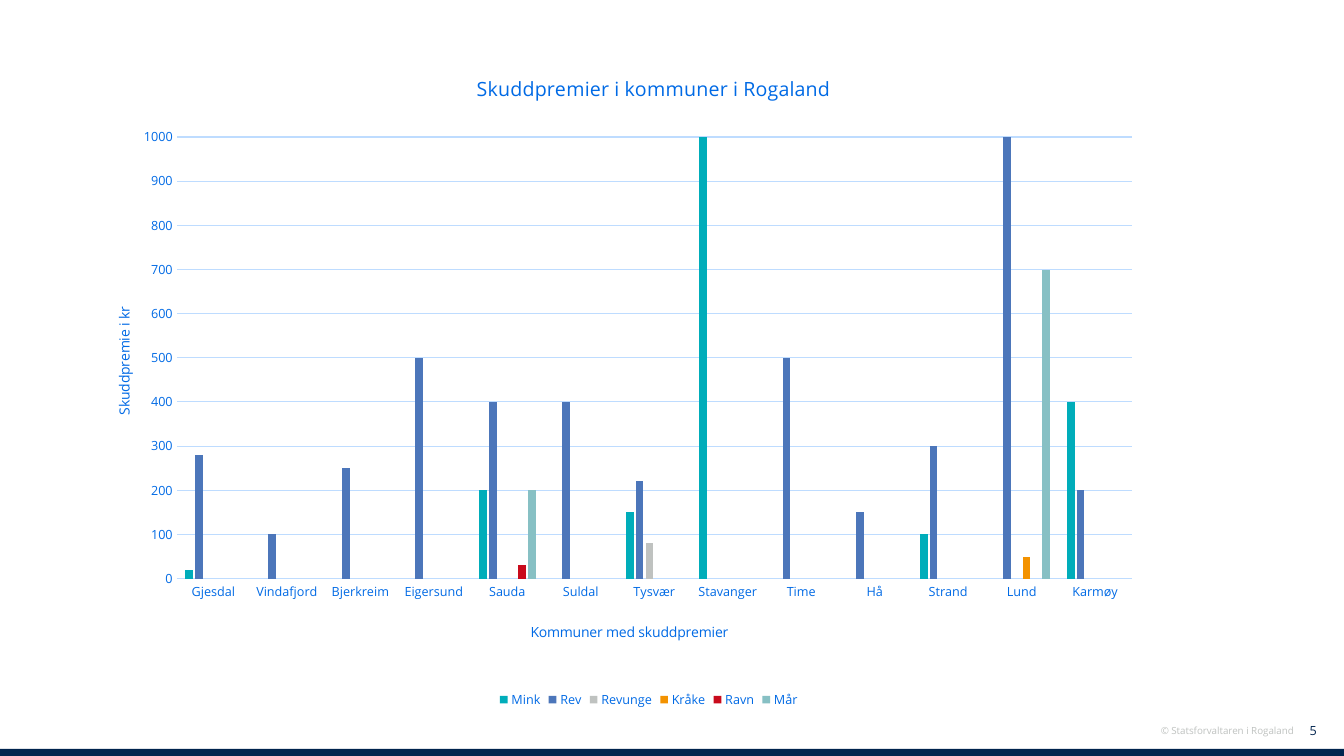
from dataclasses import dataclass

from pptx import Presentation
from pptx.chart.data import CategoryChartData
from pptx.dml.color import RGBColor
from pptx.enum.chart import XL_CHART_TYPE, XL_LEGEND_POSITION, XL_TICK_MARK
from pptx.enum.shapes import MSO_SHAPE
from pptx.enum.text import MSO_ANCHOR, PP_ALIGN
from pptx.oxml import parse_xml
from pptx.oxml.ns import nsdecls
from pptx.util import Inches, Pt

FONT = "Open Sans"
COLOURS = {
    "navy": "00244E", "blue": "006AE5", "grid": "BEDCFF", "grey": "BFC2C0",
    "teal": "00ADBA", "steel": "4C76BA", "orange": "F39200", "red": "C90B1C",
    "sage": "87C0C4",
}
MUNICIPALITIES = [
    "Gjesdal", "Vindafjord", "Bjerkreim", "Eigersund", "Sauda", "Suldal", "Tysvær",
    "Stavanger", "Time", "Hå", "Strand", "Lund", "Karmøy",
]


@dataclass
class Animal:
    name: str
    colour: str
    bounties: dict[str, int]


@dataclass
class FooterText:
    text: str
    left: float
    top: float
    width: float
    height: float
    size: float
    colour: str
    anchor: MSO_ANCHOR


ANIMALS = [
    Animal("Mink", "teal", {"Gjesdal": 20, "Sauda": 200, "Tysvær": 150,
                            "Stavanger": 1000, "Strand": 100, "Karmøy": 400}),
    Animal("Rev", "steel", {"Gjesdal": 280, "Vindafjord": 100, "Bjerkreim": 250,
                            "Eigersund": 500, "Sauda": 400, "Suldal": 400,
                            "Tysvær": 220, "Time": 500, "Hå": 150, "Strand": 300,
                            "Lund": 1000, "Karmøy": 200}),
    Animal("Revunge", "grey", {"Tysvær": 80}),
    Animal("Kråke", "orange", {"Lund": 50}),
    Animal("Ravn", "red", {"Sauda": 30}),
    Animal("Mår", "sage", {"Sauda": 200, "Lund": 700}),
]
FOOTER_TEXTS = [
    FooterText("5", 12.62, 7.12, 0.54, 0.26, 9, "navy", MSO_ANCHOR.MIDDLE),
    FooterText("© Statsforvaltaren i Rogaland", 10.85, 7.14, 2.08, 0.22, 7, "grey",
               MSO_ANCHOR.TOP),
]


def rgb(name: str) -> RGBColor:
    return RGBColor.from_string(COLOURS[name])


def set_font(font, size: float, colour: str) -> None:
    font.name = FONT
    font.size = Pt(size)
    font.bold = False
    font.color.rgb = rgb(colour)


def manual_layout(target: str, **fractions: float):
    """Return a layout element placed by fractions of the chart area."""
    parts = '<c:layoutTarget val="inner"/>' if target == "inner" else ""
    parts += "".join(f'<c:{key}Mode val="edge"/>' for key in ("x", "y"))
    parts += "".join(f'<c:{key} val="{value}"/>' for key, value in fractions.items())
    return parse_xml(
        f'<c:layout {nsdecls("c")}><c:manualLayout>{parts}</c:manualLayout></c:layout>'
    )


def set_title(title, text: str, size: float, x: float, y: float) -> None:
    frame = title.text_frame
    frame.text = text
    set_font(frame.paragraphs[0].font, size, "blue")
    element = title._element
    for layout in element.findall("{*}layout"):
        element.remove(layout)
    element.find("{*}tx").addnext(manual_layout("title", x=x, y=y))


def add_bounty_chart(page) -> None:
    data = CategoryChartData()
    data.categories = MUNICIPALITIES
    for animal in ANIMALS:
        data.add_series(animal.name, [animal.bounties.get(m) for m in MUNICIPALITIES])
    chart = page.shapes.add_chart(
        XL_CHART_TYPE.COLUMN_CLUSTERED, Inches(0.99), Inches(0.43),
        Inches(10.89), Inches(6.64), data,
    ).chart
    set_font(chart.font, 10, "navy")

    plot = chart.plots[0]
    plot.gap_width = 219
    plot.overlap = -27
    plot.vary_by_categories = False
    for series, animal in zip(plot.series, ANIMALS):
        series.format.fill.solid()
        series.format.fill.fore_color.rgb = rgb(animal.colour)
        series.invert_if_negative = False

    for axis in (chart.category_axis, chart.value_axis):
        axis.major_tick_mark = axis.minor_tick_mark = XL_TICK_MARK.NONE
        set_font(axis.tick_labels.font, 9, "blue")
    values = chart.value_axis
    values.minimum_scale, values.maximum_scale, values.major_unit = 0, 1000, 100
    values.format.line.fill.background()
    for line in (chart.category_axis.format.line, values.major_gridlines.format.line):
        line.color.rgb = rgb("grid")
        line.width = Pt(0.75)

    chart.has_title = True
    set_title(chart.chart_title, "Skuddpremier i kommuner i Rogaland", 14, 0.34, 0.04)
    set_title(chart.category_axis.axis_title, "Kommuner med skuddpremier", 10, 0.39, 0.86)
    set_title(values.axis_title, "Skuddpremie i kr", 10, 0.01, 0.39)
    body = values.axis_title.text_frame._txBody.bodyPr
    body.set("rot", "-5400000")
    body.set("vert", "horz")

    chart.has_legend = True
    chart.legend.position = XL_LEGEND_POSITION.BOTTOM
    chart.legend.include_in_layout = False
    set_font(chart.legend.font, 9, "blue")

    plot_area = chart._chartSpace.chart.plotArea
    for layout in plot_area.findall("{*}layout"):
        plot_area.remove(layout)
    plot_area.insert(0, manual_layout("inner", x=0.07, y=0.14, w=0.87, h=0.66))


def add_footer_text(page, footer: FooterText) -> None:
    box = page.shapes.add_textbox(
        Inches(footer.left), Inches(footer.top), Inches(footer.width), Inches(footer.height)
    )
    frame = box.text_frame
    frame.word_wrap = True
    frame.vertical_anchor = footer.anchor
    para = frame.paragraphs[0]
    para.text = footer.text
    para.alignment = PP_ALIGN.RIGHT
    set_font(para.font, footer.size, footer.colour)


def add_bottom_band(page) -> None:
    band = page.shapes.add_shape(
        MSO_SHAPE.RECTANGLE, 0, Inches(7.43), Inches(13.33), Inches(0.07)
    )
    band.shadow.inherit = False
    band.fill.solid()
    band.fill.fore_color.rgb = rgb("navy")
    band.line.fill.background()


def main() -> None:
    deck = Presentation()
    deck.slide_width = Inches(13.33)
    deck.slide_height = Inches(7.5)
    page = deck.slides.add_slide(deck.slide_layouts[6])
    add_bottom_band(page)
    for footer in FOOTER_TEXTS:
        add_footer_text(page, footer)
    add_bounty_chart(page)
    deck.save("out.pptx")


if __name__ == "__main__":
    main()
